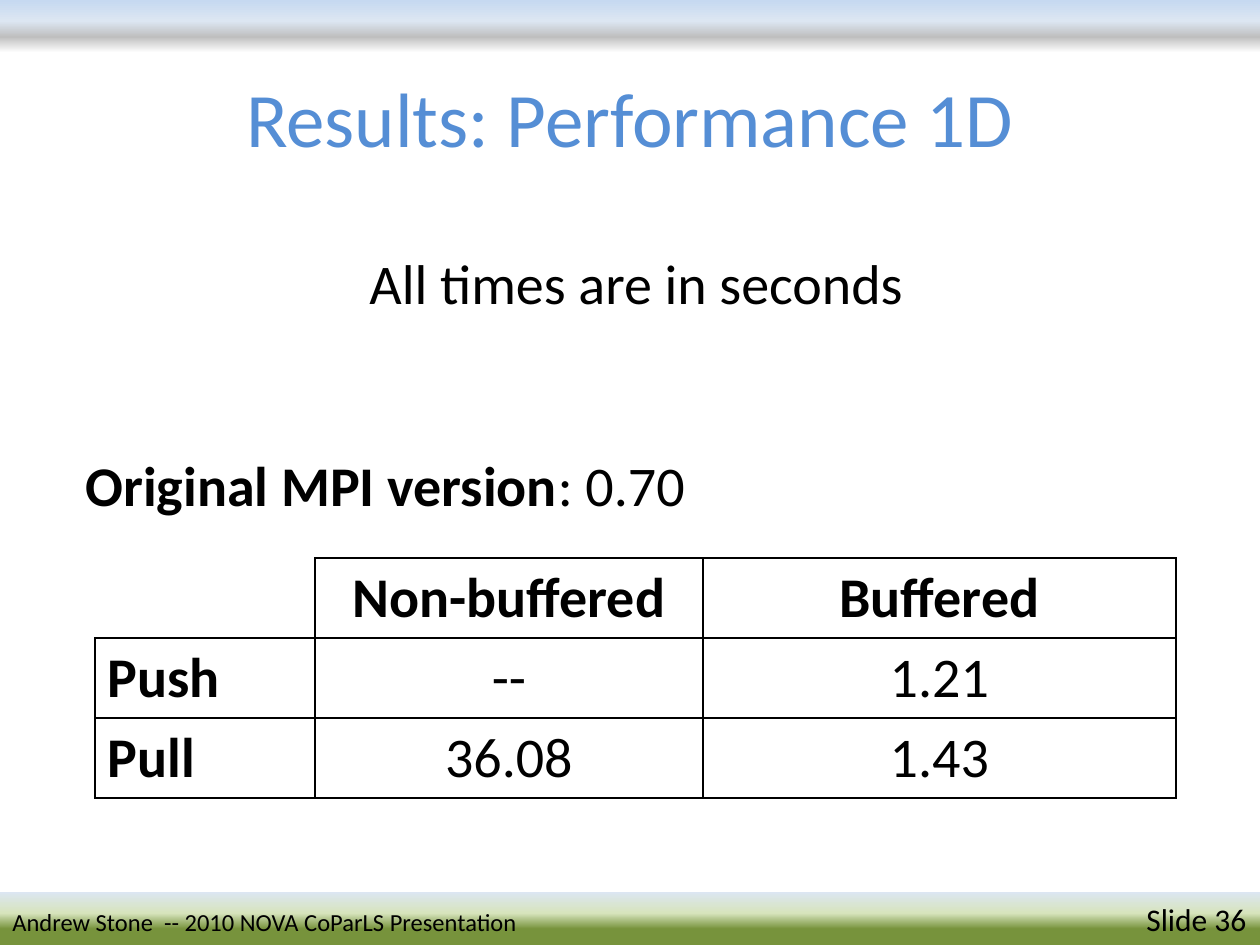
"""Build the 1D performance results slide."""
from lxml import etree
from pptx import Presentation
from pptx.dml.color import RGBColor
from pptx.enum.shapes import MSO_SHAPE
from pptx.enum.text import MSO_ANCHOR, MSO_AUTO_SIZE, PP_ALIGN
from pptx.oxml.ns import qn
from pptx.util import Pt

PX = 914400 // 126
SLIDE_SIZE = (1260, 945)
FONT = "Calibri"
BLACK = RGBColor(0x00, 0x00, 0x00)
BLUE = RGBColor(0x55, 0x8E, 0xD5)
PALE_BLUE = RGBColor(0xDC, 0xE6, 0xF2)
SKY = RGBColor(0xC6, 0xD9, 0xF1)
GRAY = RGBColor(0xBF, 0xBF, 0xBF)
WHITE = RGBColor(0xFF, 0xFF, 0xFF)
PALE_GREEN = RGBColor(0xD7, 0xE4, 0xBD)
GREEN = RGBColor(0x77, 0x93, 0x3C)

BODY = {"size": Pt(32)}
BOLD = {"size": Pt(32), "bold": True}
TITLE = {"size": Pt(44), "color": BLUE}
TEXTS = [
    ((63, 38, 1134, 157), [("Results: Performance 1D", TITLE)], PP_ALIGN.CENTER, True),
    ((73, 444, 630, 81), [("Original MPI version", BOLD), (": 0.70", BODY)], PP_ALIGN.LEFT, False),
    ((357, 242, 564, 81), [("All times are in seconds", BODY)], PP_ALIGN.LEFT, False),
]
BAND_HEIGHT = 53
HEADER_STOPS = [(0, SKY), (40, PALE_BLUE), (70, GRAY), (100, WHITE)]
FOOTER_STOPS = [(0, PALE_BLUE), (40, PALE_GREEN), (70, GREEN)]
FOOTER_RUNS = [
    ("Andrew Stone  -- 2010 NOVA CoParLS Presentation \t", {"size": Pt(14)}),
    ("Slide 36", {"size": Pt(18)}),
]
FOOTER_TAB = 1134
TIMES = [
    ("", "Non-buffered", "Buffered"),
    ("Push", "--", "1.21"),
    ("Pull", "36.08", "1.43"),
]
TABLE_ORIGIN = (95, 558)
COLUMN_WIDTHS = (220, 388, 473)
ROW_HEIGHT = 80


def emu(lengths):
    return [length * PX for length in lengths]


def add_runs(paragraph, runs, alignment):
    paragraph.alignment = alignment
    for text, style in runs:
        run = paragraph.add_run()
        run.text = text
        formats = {"name": FONT, "color": BLACK, **style}
        run.font.color.rgb = formats.pop("color")
        for name, value in formats.items():
            setattr(run.font, name, value)


def add_text(slide, box, runs, alignment, wraps):
    frame = slide.shapes.add_textbox(*emu(box)).text_frame
    frame.word_wrap = wraps
    if wraps:
        frame.vertical_anchor = MSO_ANCHOR.MIDDLE
    else:
        frame.auto_size = MSO_AUTO_SIZE.SHAPE_TO_FIT_TEXT
    add_runs(frame.paragraphs[0], runs, alignment)


def add_band(slide, top, stops):
    box = emu((0, top, SLIDE_SIZE[0], BAND_HEIGHT))
    shape = slide.shapes.add_shape(MSO_SHAPE.RECTANGLE, *box)
    shape.shadow.inherit = False
    shape.line.fill.background()
    shape.fill.gradient()
    gradient = shape.fill._xPr.find(qn("a:gradFill"))
    stop_list = gradient.find(qn("a:gsLst"))
    for stop in list(stop_list):
        stop_list.remove(stop)
    for position, color in stops:
        stop = etree.SubElement(stop_list, qn("a:gs"), pos=str(position * 1000))
        etree.SubElement(stop, qn("a:srgbClr"), val=str(color))
    gradient.find(qn("a:lin")).set("ang", "5400000")
    return shape


def add_footer(slide):
    shape = add_band(slide, SLIDE_SIZE[1] - BAND_HEIGHT, FOOTER_STOPS)
    frame = shape.text_frame
    frame.vertical_anchor = MSO_ANCHOR.MIDDLE
    paragraph = frame.paragraphs[0]
    add_runs(paragraph, FOOTER_RUNS, PP_ALIGN.LEFT)
    tabs = etree.SubElement(paragraph._p.get_or_add_pPr(), qn("a:tabLst"))
    etree.SubElement(tabs, qn("a:tab"), pos=str(FOOTER_TAB * PX), algn="l")


def add_borders(cell, drawn_sides):
    properties = cell._tc.get_or_add_tcPr()
    for side in "LRTB":
        line = etree.SubElement(properties, qn(f"a:ln{side}"), w=str(Pt(1)))
        if side in drawn_sides:
            fill = etree.SubElement(line, qn("a:solidFill"))
            etree.SubElement(fill, qn("a:srgbClr"), val=str(BLACK))
        else:
            etree.SubElement(line, qn("a:noFill"))


def add_times_table(slide):
    size = (sum(COLUMN_WIDTHS), ROW_HEIGHT * len(TIMES))
    box = emu(TABLE_ORIGIN + size)
    table = slide.shapes.add_table(len(TIMES), len(COLUMN_WIDTHS), *box).table
    table.first_row = table.horz_banding = False
    for column, width in zip(table.columns, COLUMN_WIDTHS):
        column.width = width * PX
    for row_index, row in enumerate(TIMES):
        table.rows[row_index].height = ROW_HEIGHT * PX
        for column_index, text in enumerate(row):
            cell = table.cell(row_index, column_index)
            is_corner = row_index == column_index == 0
            add_borders(cell, "RB" if is_corner else "LRTB")
            cell.fill.background()
            style = BOLD if row_index == 0 or column_index == 0 else BODY
            alignment = PP_ALIGN.CENTER if column_index else PP_ALIGN.LEFT
            if text:
                add_runs(cell.text_frame.paragraphs[0], [(text, style)], alignment)


def main():
    presentation = Presentation()
    presentation.slide_width, presentation.slide_height = emu(SLIDE_SIZE)
    slide = presentation.slides.add_slide(presentation.slide_layouts[6])
    add_band(slide, 0, HEADER_STOPS)
    for text in TEXTS:
        add_text(slide, *text)
    add_times_table(slide)
    add_footer(slide)
    presentation.save("out.pptx")


if __name__ == "__main__":
    main()
